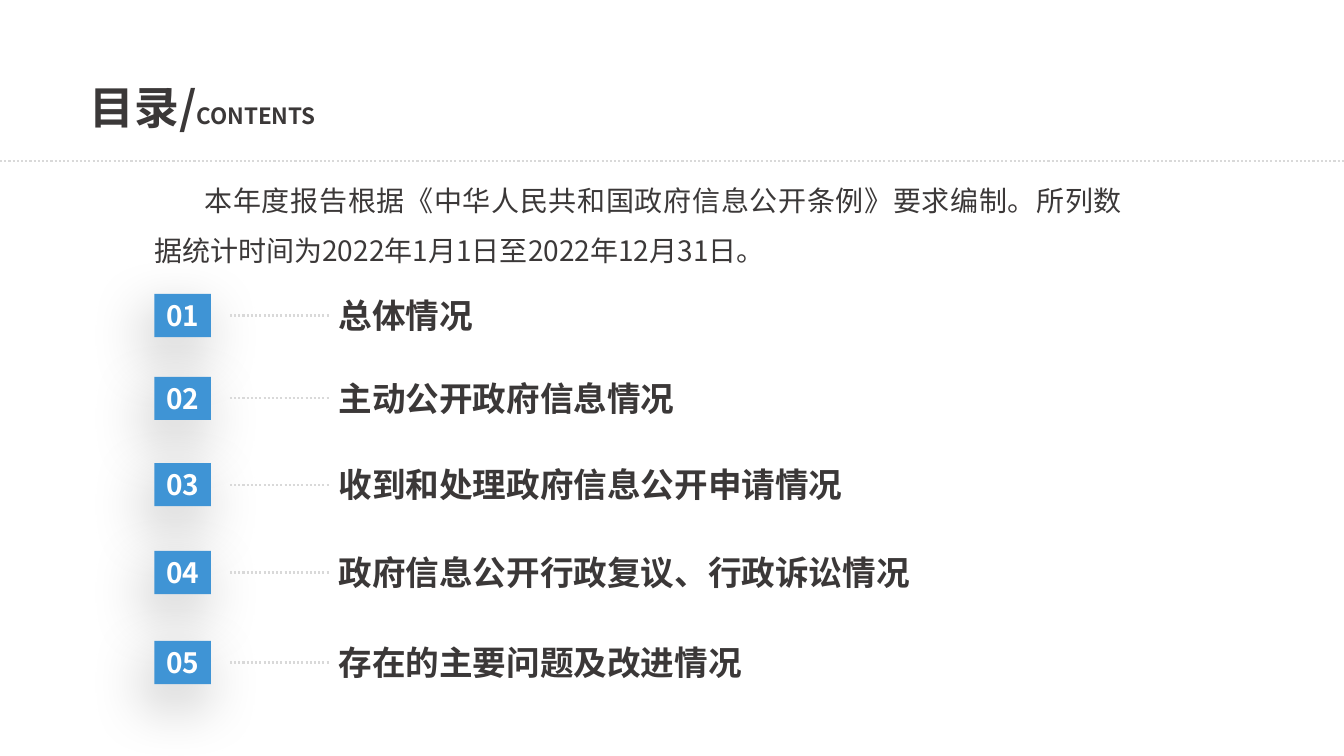
from lxml.etree import SubElement
from pptx import Presentation
from pptx.dml.color import RGBColor
from pptx.enum.dml import MSO_LINE
from pptx.enum.shapes import MSO_CONNECTOR, MSO_SHAPE
from pptx.enum.text import MSO_ANCHOR, MSO_AUTO_SIZE, PP_ALIGN
from pptx.oxml import parse_xml
from pptx.oxml.ns import qn
from pptx.util import Pt

TITLE = [("目录/", 32), ("CONTENTS", 16)]
INTRO = "本年度报告根据《中华人民共和国政府信息公开条例》要求编制。所列数据统计时间为2022年1月1日至2022年12月31日。"
SECTIONS = [
    ("总体情况", 225.4, 229),
    ("主动公开政府信息情况", 284.6, 276.5),
    ("收到和处理政府信息公开申请情况", 346.2, 395.3),
    ("政府信息公开行政复议、行政诉讼情况", 408.9, 576),
    ("存在的主要问题及改进情况", 473.2, 424.1),
]

FONT = "Noto Sans CJK SC"
BLUE = RGBColor(0x3F, 0x94, 0xD5)
DARK = RGBColor(0x3B, 0x38, 0x38)
GREY = RGBColor(0xD9, 0xD9, 0xD9)
WHITE = RGBColor(0xFF, 0xFF, 0xFF)

SLIDE_WIDTH, SLIDE_HEIGHT = 960, 540
RULE_Y = 115.2
BADGE_LEFT, BADGE_WIDTH, BADGE_HEIGHT = 110.2, 40.5, 30.8
LEADER_LEFT, HEADING_LEFT, HEADING_HEIGHT = 164.2, 234.7, 36.3
SHADOW = (
    '<a:effectLst xmlns:a="http://schemas.openxmlformats.org/drawingml/2006/main">'
    f'<a:outerShdw blurRad="{Pt(43)}" dist="{Pt(15)}" dir="{110 * 60000}" algn="t" rotWithShape="0">'
    '<a:srgbClr val="000000"><a:alpha val="26000"/></a:srgbClr>'
    '</a:outerShdw></a:effectLst>'
)


def set_font(run, size, color, bold=True):
    font = run.font
    font.name, font.size, font.bold = FONT, Pt(size), bold
    font.color.rgb = color
    properties = font._element if hasattr(font, "_element") else font._rPr
    SubElement(properties, qn("a:ea")).set("typeface", FONT)


def write(shape, runs, color, align, bold=True):
    paragraph = shape.text_frame.paragraphs[0]
    paragraph.alignment = align
    for text, size in runs:
        run = paragraph.add_run()
        run.text = text
        set_font(run, size, color, bold)
    return paragraph


def add_text(slide, box, runs, align=PP_ALIGN.LEFT, bold=True):
    shape = slide.shapes.add_textbox(*map(Pt, box))
    shape.text_frame.word_wrap = True
    shape.text_frame.auto_size = MSO_AUTO_SIZE.SHAPE_TO_FIT_TEXT
    return write(shape, runs, DARK, align, bold)


def add_dotted_line(slide, left, right, y):
    line = slide.shapes.add_connector(MSO_CONNECTOR.STRAIGHT, Pt(left), Pt(y), Pt(right), Pt(y))
    line.line.color.rgb = GREY
    line.line.width = Pt(1.5)
    line.line.dash_style = MSO_LINE.ROUND_DOT
    SubElement(line._element.spPr, qn("a:effectLst"))


def add_badge(slide, number, center):
    badge = slide.shapes.add_shape(
        MSO_SHAPE.RECTANGLE, Pt(BADGE_LEFT), Pt(center - BADGE_HEIGHT / 2), Pt(BADGE_WIDTH), Pt(BADGE_HEIGHT))
    badge.fill.solid()
    badge.fill.fore_color.rgb = BLUE
    badge.line.fill.background()
    badge._element.spPr.append(parse_xml(SHADOW))
    badge.text_frame.vertical_anchor = MSO_ANCHOR.MIDDLE
    write(badge, [(f"{number:02}", 20)], WHITE, PP_ALIGN.CENTER)


def main():
    presentation = Presentation()
    presentation.slide_width, presentation.slide_height = Pt(SLIDE_WIDTH), Pt(SLIDE_HEIGHT)
    slide = presentation.slides.add_slide(presentation.slide_layouts[6])

    add_dotted_line(slide, 0, SLIDE_WIDTH, RULE_Y)
    add_text(slide, (56.9, 53.3, 188.6, 46.1), TITLE, PP_ALIGN.JUSTIFY)

    for number, (heading, center, width) in enumerate(SECTIONS, 1):
        add_badge(slide, number, center)
        add_text(slide, (HEADING_LEFT, center - HEADING_HEIGHT / 2, width, HEADING_HEIGHT), [(heading, 24)])
        add_dotted_line(slide, LEADER_LEFT, HEADING_LEFT, center)

    intro = add_text(slide, (103, RULE_Y, 705.6, 79.9), [(INTRO, 20)], PP_ALIGN.JUSTIFY, False)
    intro.line_spacing = 1.5
    intro._p.get_or_add_pPr().set("indent", str(Pt(36)))

    presentation.save("out.pptx")


if __name__ == "__main__":
    main()
